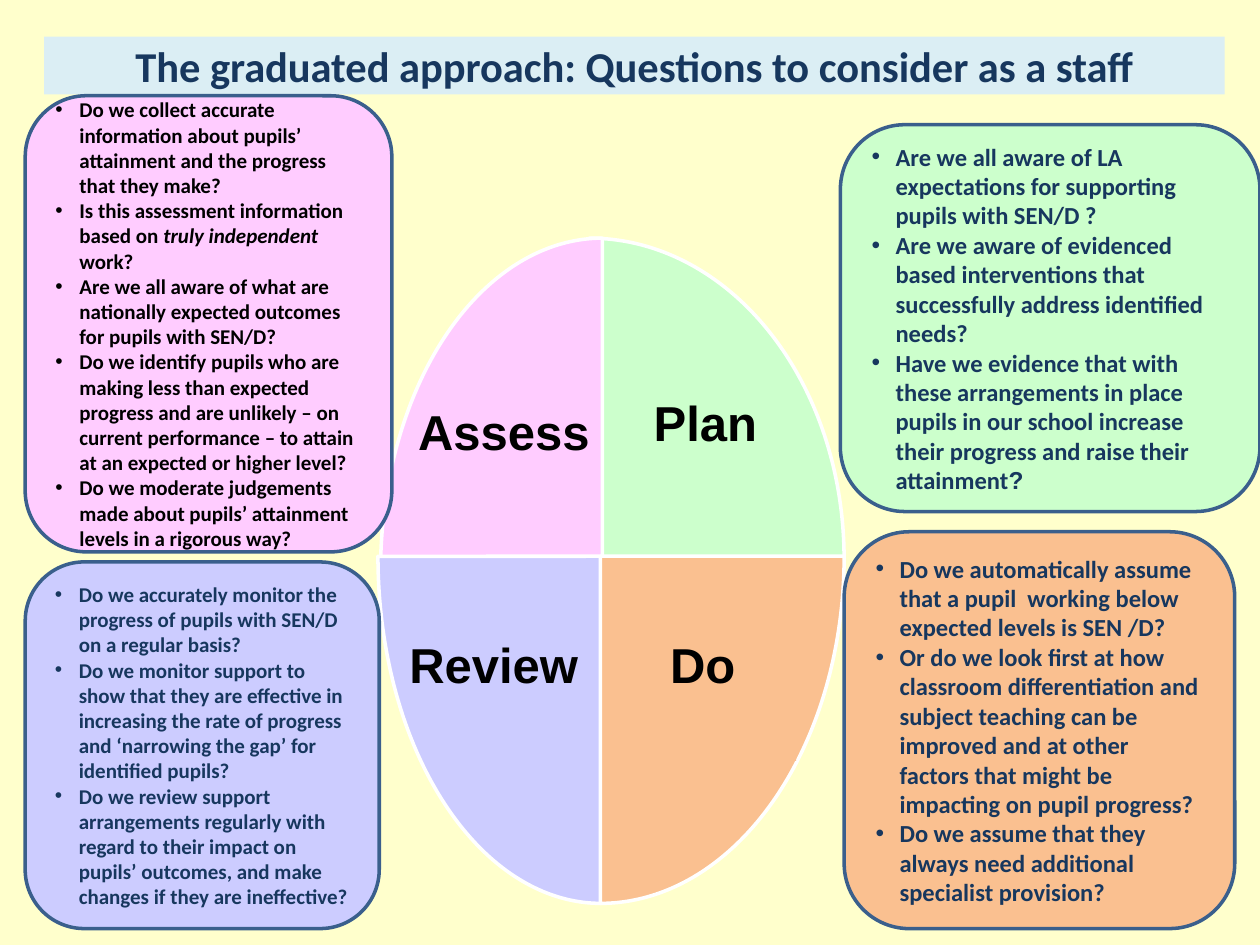
from lxml import etree
from pptx import Presentation
from pptx.dml.color import RGBColor
from pptx.enum.shapes import MSO_SHAPE
from pptx.enum.text import MSO_ANCHOR, PP_ALIGN
from pptx.oxml.ns import qn
from pptx.util import Inches, Pt

PIE, RECT, ROUND = MSO_SHAPE.PIE, MSO_SHAPE.RECTANGLE, MSO_SHAPE.ROUNDED_RECTANGLE
MIDDLE, LEFT, CENTER = MSO_ANCHOR.MIDDLE, PP_ALIGN.LEFT, PP_ALIGN.CENTER

HUES = {
    "page": "FFFFCC", "band": "DBEEF4", "navy": "17375E", "edge": "3A5F8C",
    "black": "000000", "white": "FFFFFF", "green": "CCFFCC", "pink": "FFCCFF",
    "lilac": "CCCCFF", "orange": "FAC090",
}
RGB = {name: RGBColor.from_string(code) for name, code in HUES.items()}

deck = Presentation()
deck.slide_width, deck.slide_height = Inches(10), Inches(7.5)
CELL = deck.slide_width / 100  # the slide is a grid of 100 columns by 75 rows


def grid(*spots):
    return [round(spot * CELL) for spot in spots]


def write(para, text, hue, **form):
    run = para.add_run()
    run.text = text
    run.font.color.rgb = RGB[hue]
    for key, value in form.items():
        setattr(run.font, key, value)


slide = deck.slides.add_slide(deck.slide_layouts[5])
slide.background.fill.solid()
slide.background.fill.fore_color.rgb = RGB["page"]

# Title band
title = slide.shapes.title
title.left, title.top, title.width, title.height = grid(3.5, 2.9, 93.7, 4.6)
title.fill.solid()
title.fill.fore_color.rgb = RGB["band"]
title.text_frame.vertical_anchor = MIDDLE
para = title.text_frame.paragraphs[0]
para.alignment = CENTER
write(para, "The graduated approach: Questions to consider as a staff", "navy",
      name="Calibri", size=Pt(24.3), bold=True)

# Quarters of the cycle: hue, pie place, start and end angle, inner panel place
quarters = [
    ("green", (26.6, 18.9, 40.4, 50.9), (270, 0), (48.1, 29.5, 14.9, 13.9)),
    ("pink", (30.2, 18.9, 35.2, 52.9), (180, 270), (33.8, 29.9, 13, 14.5)),
    ("lilac", (30, 16.6, 35.4, 55.1), (90, 180), (33.6, 45.3, 13.1, 15.1)),
    ("orange", (28.3, 16.6, 38.7, 55.1), (0, 90), (48.9, 45.3, 14.3, 15.1)),
]
for hue, place, arc, inner in quarters:
    group = slide.shapes.add_group_shape()
    pie = group.shapes.add_shape(PIE, *grid(*place))
    for i, angle in enumerate(arc):
        pie.adjustments[i] = angle * 0.6  # 60000 units a degree, in 100000ths
    pie.line.color.rgb = RGB["white"]
    pie.line.width = Pt(2)
    panel = group.shapes.add_shape(RECT, *grid(*inner))
    panel.line.fill.background()
    for part in (pie, panel):
        part.shadow.inherit = False
        part.fill.solid()
        part.fill.fore_color.rgb = RGB[hue]

# Stage names
stages = [
    ("Assess", (32.2, 31.4, 15.8, 5.7)), ("Plan", (50.9, 30.7, 11.7, 5.7)),
    ("Do", (52.2, 49.9, 9.2, 5.7)), ("Review", (31.5, 49.9, 16.1, 5.7)),
]
for name, place in stages:
    frame = slide.shapes.add_textbox(*grid(*place)).text_frame
    frame.word_wrap = name != "Assess"
    write(frame.paragraphs[0], name, "black", name="Arial", size=Pt(28), bold=True)

# Question boxes: fill, text hue, size, place, questions as lists of (text, format)
boxes = [
    ("green", "navy", 14, (66.7, 9.9, 33.3, 30.7), [
        [("Are we all aware of LA expectations for supporting pupils with SEN/D ?", {})],
        [("Are we aware of evidenced based interventions that successfully address "
          "identified needs?", {})],
        [("Have we evidence that with these arrangements in place pupils in our school "
          "increase their progress and raise their attainment", {}),
         ("?", {"name": "Arial"})],
    ]),
    ("pink", "black", 12, (2, 7.6, 29.1, 36.2), [
        [("Do we collect accurate information about pupils’ attainment and the progress "
          "that they make?", {})],
        [("Is this assessment information based on ", {}),
         ("truly independent ", {"italic": True}), ("work?", {})],
        [("Are we all aware of what are nationally expected outcomes for pupils with "
          "SEN/D?", {})],
        [("Do we identify pupils who are making less than expected progress and are "
          "unlikely – on current performance – to attain at an expected or higher "
          "level?", {})],
        [("Do we moderate judgements made about pupils’ attainment levels in a rigorous "
          "way?", {})],
    ]),
    ("lilac", "navy", 12, (2, 44.6, 28.1, 29.1), [
        [("Do we accurately monitor the progress of pupils with SEN/D on a regular "
          "basis?", {})],
        [("Do we monitor support to show that they are effective in increasing the rate "
          "of progress and ‘narrowing the gap’ for identified pupils?", {})],
        [("Do we review support arrangements regularly with regard to their impact on "
          "pupils’ outcomes, and make changes if they are ineffective?", {})],
    ]),
    ("orange", "navy", 14, (67, 42.2, 31, 31.5), [
        [("Do we automatically assume that a pupil  working below expected levels is "
          "SEN /D?", {})],
        [("Or do we look first at how classroom differentiation and subject teaching can "
          "be improved and at other factors that might be impacting on pupil "
          "progress?", {})],
        [("Do we assume that they always need additional specialist provision?", {})],
    ]),
]
dent = grid(1.9)[0]
for hue, ink, size, place, asks in boxes:
    box = slide.shapes.add_shape(ROUND, *grid(*place))
    box.shadow.inherit = False
    box.fill.solid()
    box.fill.fore_color.rgb = RGB[hue]
    box.line.color.rgb = RGB["edge"]
    box.line.width = Pt(2)
    frame = box.text_frame
    frame.word_wrap = True
    frame.vertical_anchor = MIDDLE
    for i, ask in enumerate(asks):
        para = frame.add_paragraph() if i else frame.paragraphs[0]
        para.alignment = LEFT
        props = para._p.get_or_add_pPr()
        props.set("marL", str(dent))
        props.set("indent", str(-dent))
        etree.SubElement(props, qn("a:buFont"), typeface="Arial")
        etree.SubElement(props, qn("a:buChar"), char="•")
        for text, extra in ask:
            form = {"name": "Calibri", "size": Pt(size), "bold": True, **extra}
            write(para, text, ink, **form)

deck.save("out.pptx")
